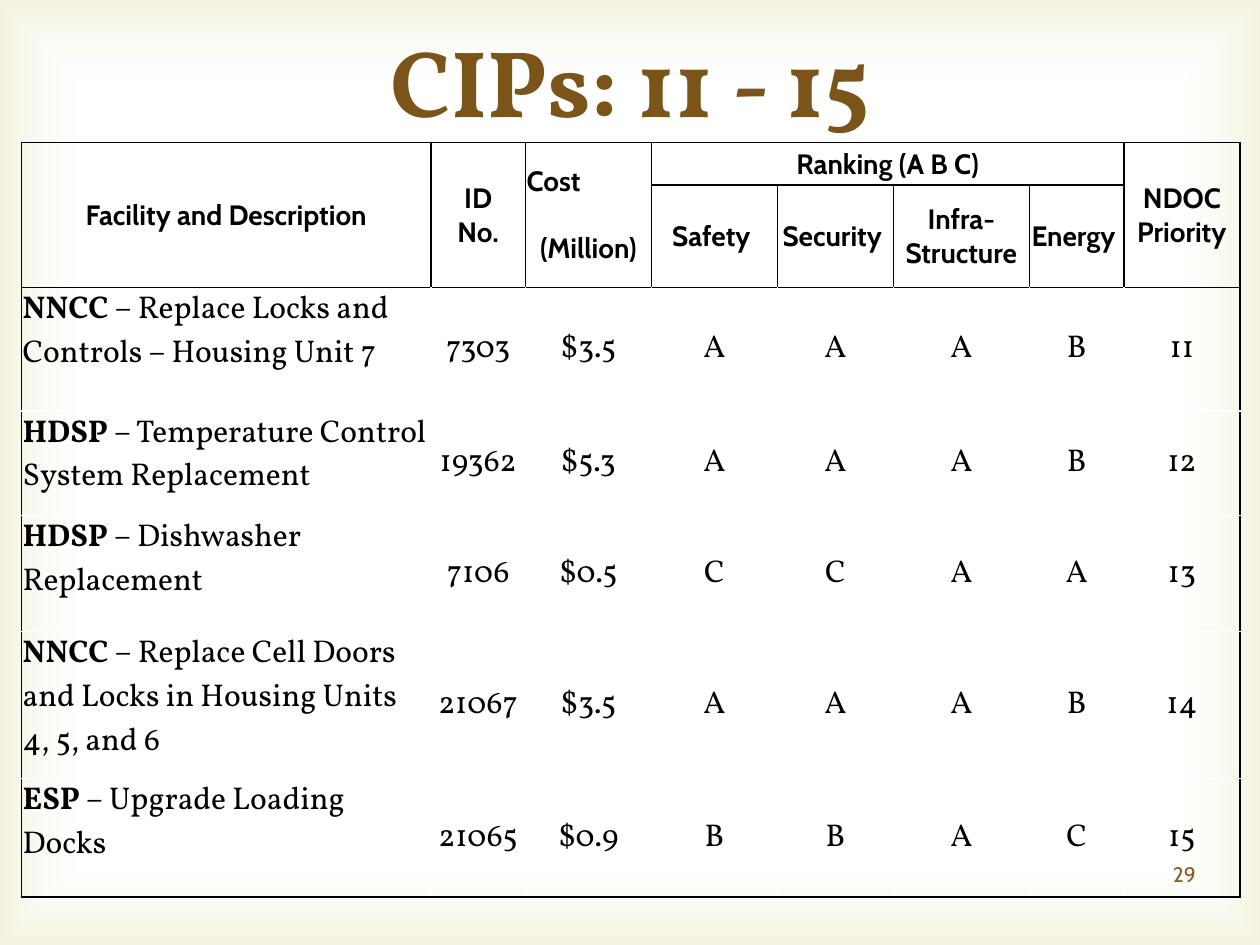
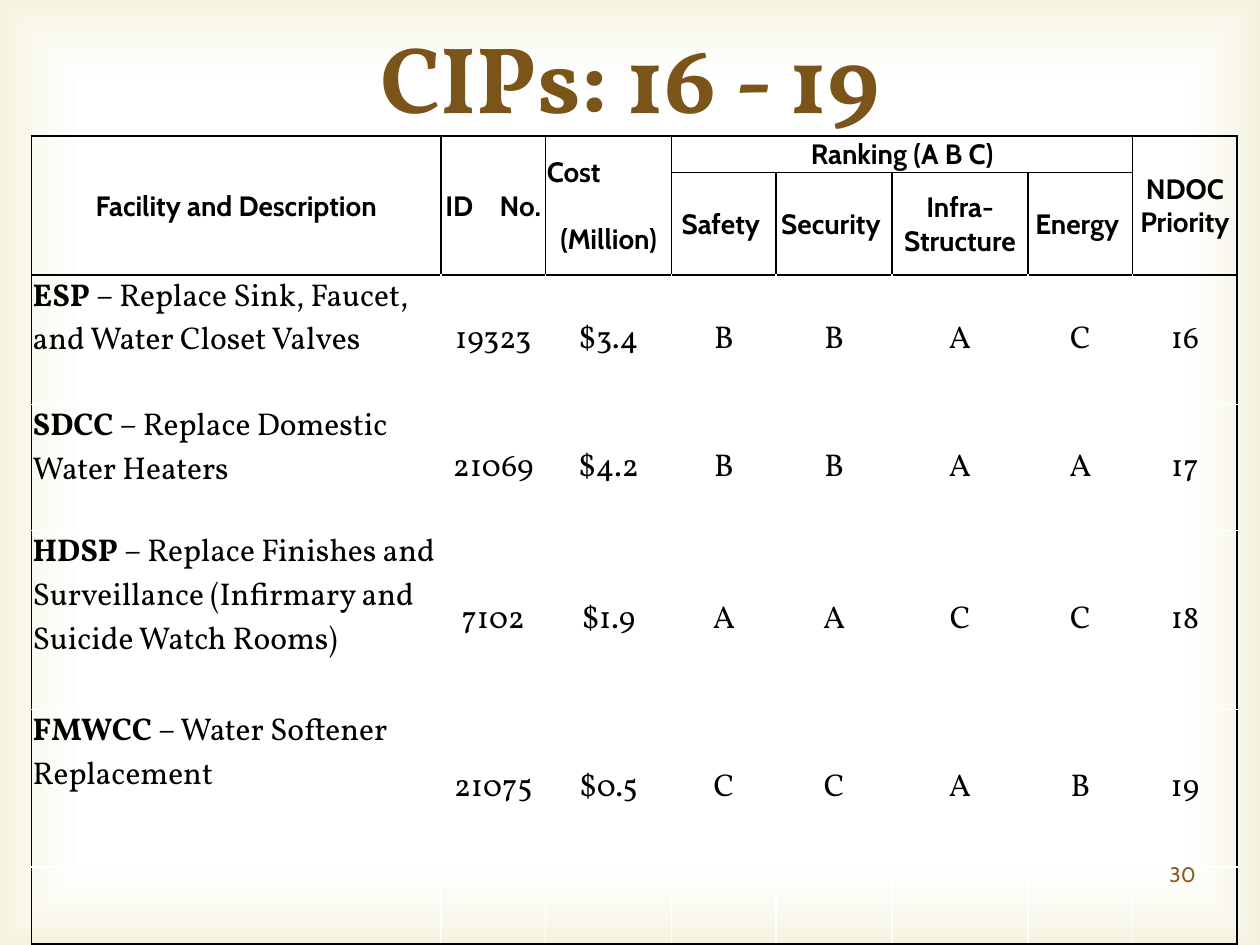
from lxml import etree
from pptx import Presentation
from pptx.dml.color import RGBColor
from pptx.enum.shapes import MSO_SHAPE
from pptx.enum.text import MSO_ANCHOR, MSO_AUTO_SIZE, PP_ALIGN
from pptx.oxml import parse_xml
from pptx.oxml.ns import nsdecls, qn
from pptx.util import Inches, Pt

LEFT, CENTER, RIGHT = PP_ALIGN.LEFT, PP_ALIGN.CENTER, PP_ALIGN.RIGHT
TOP, MIDDLE = MSO_ANCHOR.TOP, MSO_ANCHOR.MIDDLE
RECT = MSO_SHAPE.RECTANGLE
NO_FIT = MSO_AUTO_SIZE.NONE

COLORS = {"title": "7B541A", "page": "895D1D", "ink": "000000",
          "white": "FFFFFF", "glow": "D1CA75"}
HEAD_FONT, BODY_FONT = "Cabin", "Vollkorn"
GLOW = [(83, "white", 11), (100, "glow", 23)]

GROUPS = ["Safety ", "Security ", "Infra-Structure", "Energy "]

SLIDES = [
    {
        "title": "CIPs: 11 - 15", "box": (0.5, 0.32, 9, 0.62),
        "page": "29", "at": (0.17, 1.13), "id": "ID\vNo.",
        "cols": [3.25, 0.75, 1, 1, 0.92, 1.08, 0.75, 0.92],
        "rows": [0.34, 0.81, 0.98, 0.83, 0.92, 1.17, 0.94],
        "items": [
            ("NNCC| – Replace Locks and Controls – Housing Unit 7",
             "7303", "$3.5", "A", "A", "A", "B", "11"),
            ("HDSP| – Temperature Control System Replacement",
             "19362", "$5.3", "A", "A", "A", "B", "12"),
            ("HDSP| – Dishwasher Replacement",
             "7106", "$0.5", "C", "C", "A", "A", "13"),
            ("NNCC| – Replace Cell Doors and Locks in Housing Units 4, 5, and 6",
             "21067", "$3.5", "A", "A", "A", "B", "14"),
            ("ESP| – Upgrade Loading Docks",
             "21065", "$0.9", "B", "B", "A", "C", "15"),
        ],
    },
    {
        "title": "CIPs: 16 - 19", "box": (0.5, 0.13, 9, 0.95),
        "page": "30", "at": (0.25, 1.08), "id": "ID| |No.",
        "cols": [3.25, 0.83, 1, 0.83, 0.92, 1.08, 0.83, 0.83],
        "rows": [0.29, 0.81, 1.03, 1, 1.42, 1.25, 0.61],
        "items": [
            ("ESP| – Replace Sink, Faucet, and Water Closet Valves",
             "19323", "$3.4", "B", "B", "A", "C", "16"),
            ("SDCC| – Replace Domestic Water Heaters",
             "21069", "$4.2", "B", "B", "A", "A", "17"),
            ("HDSP| – Replace Finishes and Surveillance (Infirmary and Suicide Watch Rooms)",
             "7102", "$1.9", "A", "A", "C", "C", "18"),
            ("FMWCC| – Water Softener Replacement",
             "21075", "$0.5", "C", "C", "A", "B", "19"),
            ("",) * 8,
        ],
    },
]


def style(para, name, size, color, bold, align):
    para.alignment = align
    font = para.font
    font.name, font.size, font.bold = name, Pt(size), bold
    font.color.rgb = RGBColor.from_string(COLORS[color])


def add_glow(prs, slide):
    shape = slide.shapes.add_shape(RECT, 0, 0, prs.slide_width, prs.slide_height)
    shape.shadow.inherit = False
    shape.line.fill.background()
    shape.fill.background()
    stops = "".join(
        f'<a:gs pos="{pos * 1000}"><a:srgbClr val="{COLORS[key]}">'
        f'<a:alpha val="{alpha * 1000}"/></a:srgbClr></a:gs>'
        for pos, key, alpha in GLOW)
    grad = parse_xml(
        f'<a:gradFill {nsdecls("a")} rotWithShape="1"><a:gsLst>{stops}</a:gsLst>'
        '<a:path path="rect"><a:fillToRect l="50000" t="50000" r="50000" b="50000"/>'
        '</a:path></a:gradFill>')
    props = shape._element.spPr
    props.replace(props.find(qn("a:noFill")), grad)
    prs.slide_master.shapes._spTree.insert(2, shape._element)


def set_edges(cell, edges):
    props = cell._tc.get_or_add_tcPr()
    for pos, (side, key) in enumerate(zip("LRTB", edges)):
        line = etree.Element(qn(f"a:ln{side}"), w=str(Pt(1)))
        fill = etree.SubElement(line, qn("a:solidFill"))
        etree.SubElement(fill, qn("a:srgbClr"), val=COLORS[key])
        props.insert(pos, line)


def fill_cell(cell, text, name, size, bold, align, anchor):
    cell.vertical_anchor = anchor
    cell.margin_left = cell.margin_right = cell.margin_top = Inches(0.01)
    cell.margin_bottom = 0
    cell.fill.background()
    frame = cell.text_frame
    if "|" in text:
        for part in text.split("|"):
            frame.paragraphs[0].add_run().text = part
    else:
        frame.text = text
    for para in frame.paragraphs:
        style(para, name, size, "ink", bold, align)


def add_grid(slide, data):
    cols, rows = data["cols"], data["rows"]
    frame = slide.shapes.add_table(
        len(rows), len(cols), *map(Inches, data["at"]),
        Inches(sum(cols)), Inches(sum(rows)))
    table = frame.table
    table.first_row = table.horz_banding = False
    for col, width in zip(table.columns, cols):
        col.width = Inches(width)
    for row, height in zip(table.rows, rows):
        row.height = Inches(height)

    heads = [
        ["Facility and Description", data["id"], "Cost\n(Million)",
         "Ranking (A B C)", "", "", "", "NDOC Priority"],
        ["", "", "", *GROUPS, ""],
    ]
    for r, texts in enumerate(heads):
        for c, text in enumerate(texts):
            cell = table.cell(r, c)
            fill_cell(cell, text, HEAD_FONT, 16, True, CENTER, MIDDLE)
            set_edges(cell, ["ink"] * 4)
    for c in (0, 1, 2, 7):
        table.cell(0, c).merge(table.cell(1, c))
    table.cell(0, 3).merge(table.cell(0, 6))
    cost, unit = table.cell(0, 2).text_frame.paragraphs
    cost.alignment = LEFT
    unit.space_before = Pt(19)
    for run in table.cell(0, 1).text_frame.paragraphs[0].runs:
        if run.text == " ":
            run._r.get_or_add_rPr().set("spc", "1150")

    last_row, last_col = len(rows) - 1, len(cols) - 1
    for r, texts in enumerate(data["items"], len(heads)):
        for c, text in enumerate(texts):
            cell = table.cell(r, c)
            align, anchor = (CENTER, MIDDLE) if c else (LEFT, TOP)
            fill_cell(cell, text, BODY_FONT, 18, False, align, anchor)
            outer = (c == 0, c == last_col, r == len(heads), r == last_row)
            set_edges(cell, ["ink" if edge else "white" for edge in outer])
        for run in table.cell(r, 0).text_frame.paragraphs[0].runs[:1]:
            run.font.bold = True


def add_title(slide, data):
    title = slide.shapes.title
    title.left, title.top, title.width, title.height = map(Inches, data["box"])
    frame = title.text_frame
    frame.text = data["title"]
    frame.auto_size = NO_FIT
    frame.vertical_anchor = MIDDLE
    style(frame.paragraphs[0], BODY_FONT, 54, "title", True, CENTER)


def add_page(slide, text):
    box = slide.shapes.add_textbox(*map(Inches, (7.26, 6.74, 2.33, 0.4)))
    frame = box.text_frame
    frame.word_wrap = True
    frame.vertical_anchor = MIDDLE
    frame.text = text
    style(frame.paragraphs[0], HEAD_FONT, 12, "page", False, RIGHT)


def main():
    prs = Presentation()
    prs.slide_width, prs.slide_height = Inches(10), Inches(7.5)
    for n, data in enumerate(SLIDES):
        slide = prs.slides.add_slide(prs.slide_layouts[5])
        if n == 0:
            add_glow(prs, slide)
        add_title(slide, data)
        add_grid(slide, data)
        add_page(slide, data["page"])
    prs.save("out.pptx")


if __name__ == "__main__":
    main()
